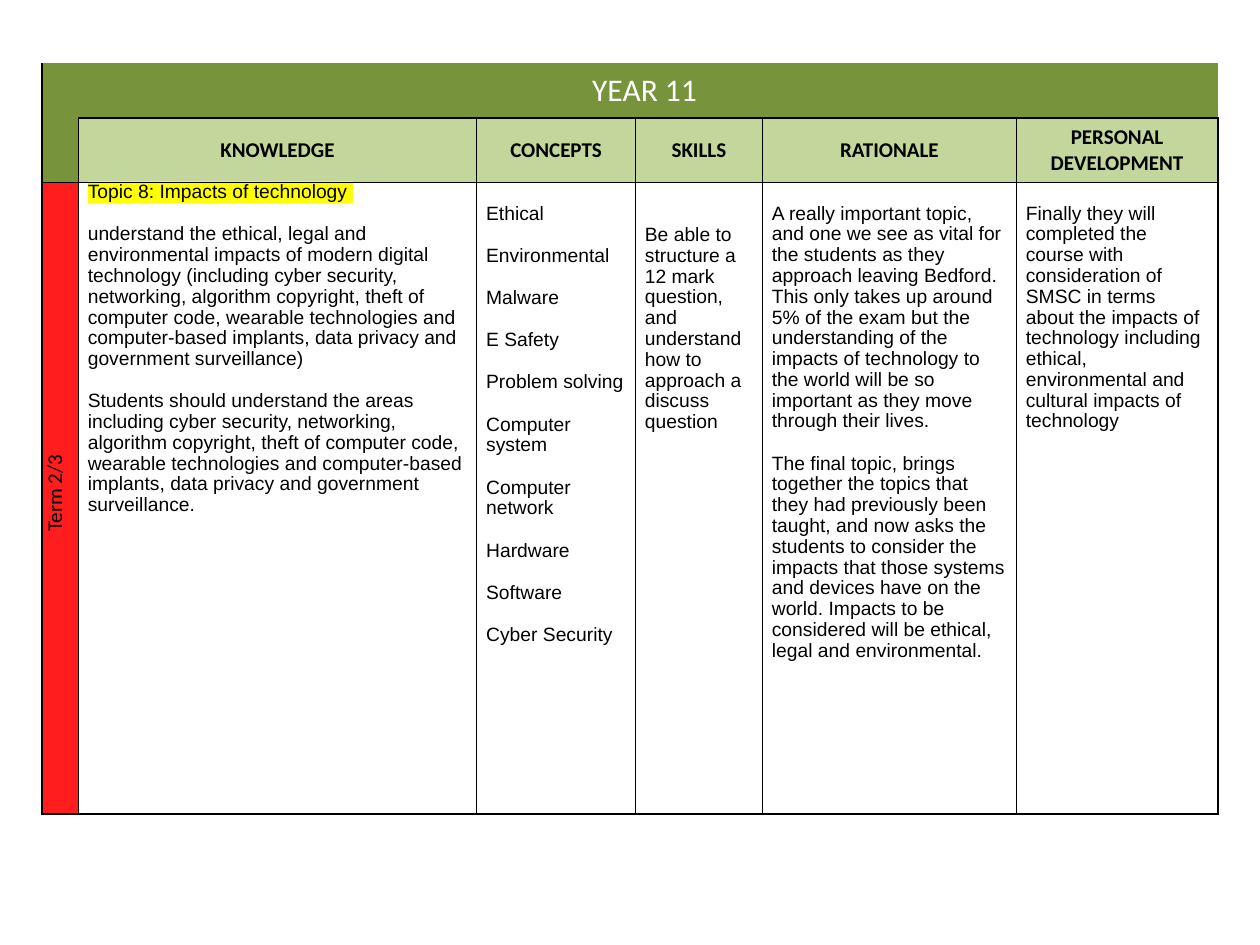
from lxml import etree
from pptx import Presentation
from pptx import util as u
from pptx.dml.color import RGBColor
from pptx.enum import text
from pptx.oxml import ns

COLORS = {
    "title": "77933C", "heading": "C3D69B", "term": "FF1D1D", "body": "FFFFFF",
    "ink": "000000", "light": "FFFFFF", "highlight": "FFFF00",
}
COLUMN_WIDTHS = [0.73, 8.03, 3.2, 2.56, 5.12, 4.06]
ROW_HEIGHTS = [1.11, 1.29, 12.74]
OUTER, INNER = 1, 0.5
LINE_HEIGHT = 12.25

HEADINGS = ["KNOWLEDGE", "CONCEPTS", "SKILLS", "RATIONALE", "PERSONAL DEVELOPMENT"]
# Each entry: lines left free at the top, then the paragraphs
TOPIC = [
    (0, ["Topic 8: Impacts of technology ",
         "understand the ethical, legal and environmental impacts of modern digital "
         "technology (including cyber security, networking, algorithm copyright, theft of "
         "computer code, wearable technologies and computer-based implants, data privacy "
         "and government surveillance)",
         "Students should understand the areas including cyber security, networking, "
         "algorithm copyright, theft of computer code, wearable technologies and "
         "computer-based implants, data privacy and government surveillance."]),
    (1, ["Ethical", "Environmental", "Malware", "E Safety", "Problem solving",
         "Computer system", "Computer network", "Hardware", "Software", "Cyber Security"]),
    (2, ["Be able to structure a 12 mark question, and understand how to approach a "
         "discuss question"]),
    (1, ["A really important topic, and one we see as vital for the students as they "
         "approach leaving Bedford. This only takes up around 5% of the exam but the "
         "understanding of the impacts of technology to the world will be so important "
         "as they move through their lives.",
         "The final topic, brings together the topics that they had previously been "
         "taught, and now asks the students to consider the impacts that those systems "
         "and devices have on the world. Impacts to be considered will be ethical, legal "
         "and environmental."]),
    (1, ["Finally they will completed the course with consideration of SMSC in terms "
         "about the impacts of technology including ethical, environmental and cultural "
         "impacts of technology"]),
]


def rgb(name):
    return RGBColor.from_string(COLORS[name])


def set_borders(cell, left, right, top, bottom):
    """Draw the four sides; a width of 0 means no line."""
    properties = cell._tc.get_or_add_tcPr()
    for place, (side, width) in enumerate(zip("LRTB", (left, right, top, bottom))):
        line = etree.Element(ns.qn(f"a:ln{side}"), w=str(int(u.Pt(width))))
        if width:
            fill = etree.SubElement(line, ns.qn("a:solidFill"))
            etree.SubElement(fill, ns.qn("a:srgbClr"), val=COLORS["ink"])
        else:
            etree.SubElement(line, ns.qn("a:noFill"))
        properties.insert(place, line)


def style_paragraph(paragraph, size, font, color="ink", bold=False):
    paragraph.font.size = u.Pt(size)
    paragraph.font.name = font
    paragraph.font.bold = bold
    paragraph.font.color.rgb = rgb(color)


def fill_cell(cell, color):
    cell.fill.solid()
    cell.fill.fore_color.rgb = rgb(color)
    cell.margin_left = cell.margin_right = u.Cm(0.19)
    cell.margin_top = cell.margin_bottom = 0


def write_label(cell, label, color, size=12, ink="ink", bold=False):
    fill_cell(cell, color)
    cell.vertical_anchor = text.MSO_ANCHOR.MIDDLE
    paragraph = cell.text_frame.paragraphs[0]
    paragraph.text = label
    paragraph.alignment = text.PP_ALIGN.CENTER
    style_paragraph(paragraph, size, "Calibri", ink, bold)


def write_body(cell, lines_above, paragraphs):
    fill_cell(cell, "body")
    cell.margin_top = u.Pt(lines_above * LINE_HEIGHT)
    frame = cell.text_frame
    for index, content in enumerate(paragraphs):
        paragraph = frame.add_paragraph() if index else frame.paragraphs[0]
        paragraph.text = content
        paragraph.line_spacing = 0.97
        if index:
            paragraph.space_before = u.Pt(LINE_HEIGHT)
        style_paragraph(paragraph, 11, "Arial")


def highlight(run):
    mark = etree.SubElement(run.font._element, ns.qn("a:highlight"))
    etree.SubElement(mark, ns.qn("a:srgbClr"), val=COLORS["highlight"])


def add_grid(slide):
    grid = slide.shapes.add_table(
        len(ROW_HEIGHTS), len(COLUMN_WIDTHS), u.Cm(0.85), u.Cm(1.27),
        u.Cm(sum(COLUMN_WIDTHS)), u.Cm(sum(ROW_HEIGHTS))).table
    grid.first_row = grid.horz_banding = False
    for column, width in zip(grid.columns, COLUMN_WIDTHS):
        column.width = u.Cm(width)
    for row, height in zip(grid.rows, ROW_HEIGHTS):
        row.height = u.Cm(height)
    return grid


def rule_grid(grid):
    """Heavy frame open at the top, heavy line under the title, thin lines inside."""
    last = len(COLUMN_WIDTHS) - 1
    for r in range(len(ROW_HEIGHTS)):
        inside = INNER if r else 0
        for c in range(last + 1):
            top, bottom = [(0, OUTER), (OUTER, INNER), (INNER, OUTER)][r]
            if c == 0 and r < 2:
                top, bottom = 0, INNER
            set_borders(grid.cell(r, c), inside if c else OUTER,
                        inside if c < last else OUTER, top, bottom)


def main():
    deck = Presentation()
    deck.slide_width, deck.slide_height = u.Cm(25.4), u.Cm(19.05)
    slide = deck.slides.add_slide(deck.slide_layouts[6])
    grid = add_grid(slide)

    # Title band and corner
    fill_cell(grid.cell(0, 0), "title")
    write_label(grid.cell(0, 1), "YEAR 11 ", "title", size=18, ink="light")

    # Column headings and topic
    for column, (heading, (lines_above, paragraphs)) in enumerate(zip(HEADINGS, TOPIC), 1):
        write_label(grid.cell(1, column), heading, "heading", bold=True)
        write_body(grid.cell(2, column), lines_above, paragraphs)
    highlight(grid.cell(2, 1).text_frame.paragraphs[0].runs[0])

    # Term, reading upwards
    term = grid.cell(2, 0)
    write_label(term, "Term 2/3", "term")
    term._tc.get_or_add_tcPr().set("vert", "vert270")
    term.text_frame.paragraphs[0]._p.get_or_add_pPr().set("marL", str(int(u.Cm(0.2))))

    rule_grid(grid)
    grid.cell(0, 0).merge(grid.cell(1, 0))
    grid.cell(0, 1).merge(grid.cell(0, len(HEADINGS)))
    deck.save("out.pptx")


if __name__ == "__main__":
    main()
